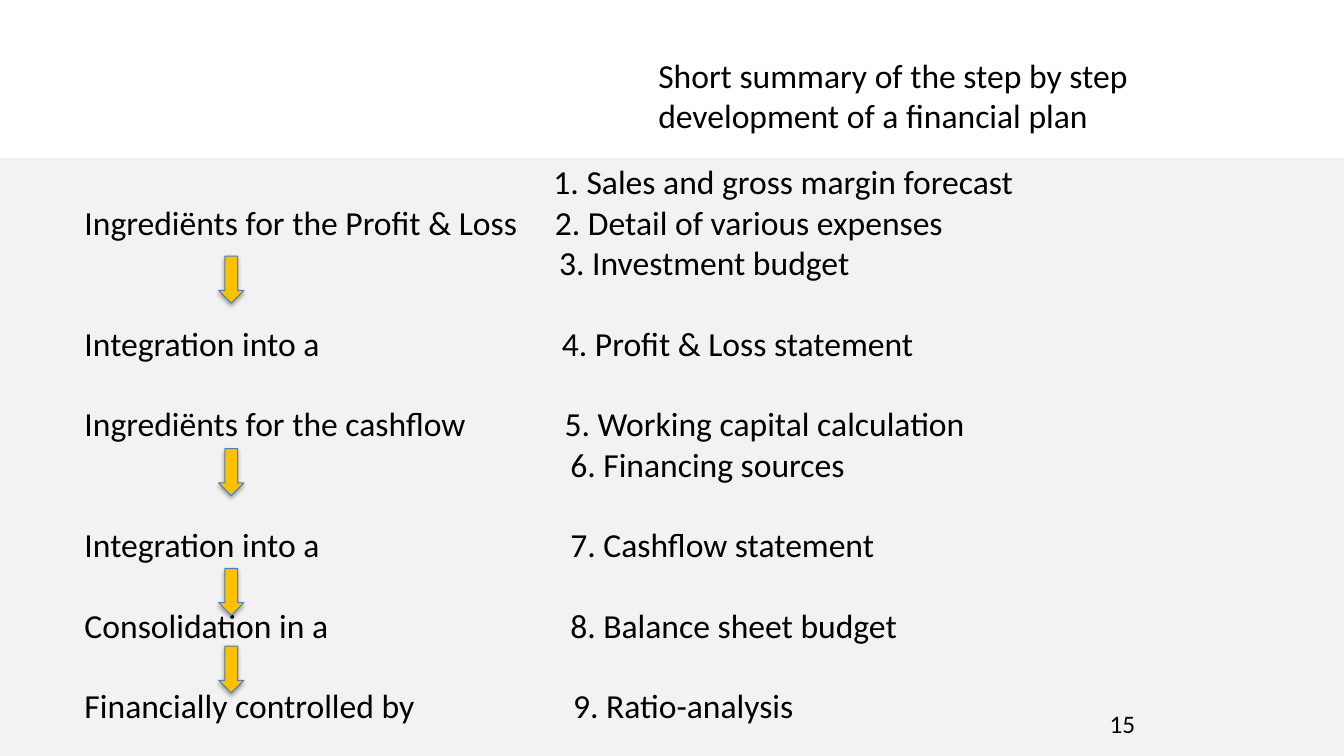
from lxml.etree import SubElement
from pptx import Presentation
from pptx.dml.color import RGBColor as Rgb
from pptx.enum.shapes import MSO_SHAPE as Shape
from pptx.enum.text import MSO_ANCHOR as Anchor, MSO_AUTO_SIZE as Auto, PP_ALIGN as Align
from pptx.oxml.ns import qn
from pptx.util import Pt

COLORS = {"text": "000000", "panel": "F2F2F2", "arrow": "FFC000", "edge": "4B7EBC"}
FRAME = {"word_wrap": True, "auto_size": Auto.NONE, "vertical_anchor": Anchor.TOP,
         "margin_left": Pt(7.2), "margin_right": Pt(7.2),
         "margin_top": Pt(3.6), "margin_bottom": Pt(3.6)}
FONT = {"name": "Calibri", "size": Pt(24), "bold": False}
GAP = 28.8
STEPS = [
    ("", "1. Sales and gross margin forecast", 335, 0),
    ("Ingrediënts for the Profit & Loss", "2. Detail of various expenses", 336, 0),
    ("", "3. Investment budget", 339, 0),
    ("Integration into a", "4. Profit & Loss statement", 341, GAP),
    ("Ingrediënts for the cashflow", "5. Working capital calculation", 343, GAP),
    ("", "6. Financing sources", 347, 0),
    ("Integration into a", "7. Cashflow statement", 347, GAP),
    ("Consolidation in a", "8. Balance sheet budget", 347, GAP),
    ("Financially controlled by", "9. Ratio-analysis", 349, GAP),
]
ARROWS = [183, 320.5, 406, 461.5]


def color(name):
    return Rgb.from_string(COLORS[name])


def apply(item, values):
    for name, value in values.items():
        setattr(item, name, value)


def place(shape, left, top, width, height):
    apply(shape, {"left": Pt(left), "top": Pt(top), "width": Pt(width), "height": Pt(height)})


def write(para, text, **extra):
    para.alignment = Align.LEFT
    run = para.add_run()
    run.text = text
    apply(run.font, {**FONT, **extra})
    run.font.color.rgb = color("text")


def add_box(slide, *box):
    shape = slide.shapes.add_textbox(*map(Pt, box))
    apply(shape.text_frame, FRAME)
    return shape.text_frame


def add_panel(slide):
    panel = slide.shapes.add_shape(Shape.RECTANGLE, 0, Pt(113), Pt(960), Pt(427))
    panel.shadow.inherit = False
    panel.fill.solid()
    panel.fill.fore_color.rgb = color("panel")
    panel.line.fill.background()


def set_title(slide, text):
    title = slide.shapes.title
    place(title, 463, 35.3, 468, 65.5)
    frame = title.text_frame
    apply(frame, FRAME)
    para = frame.paragraphs[0]
    para.line_spacing = 1.0
    write(para, text)


def set_tab(para, pos):
    tabs = SubElement(para._p.get_or_add_pPr(), qn("a:tabLst"))
    SubElement(tabs, qn("a:tab"), pos=str(Pt(pos)), algn="l")


def add_steps(slide):
    frame = add_box(slide, 53.3, 111.6, 818.6, 428)
    for num, (stage, step, pos, gap) in enumerate(STEPS):
        para = frame.add_paragraph() if num else frame.paragraphs[0]
        set_tab(para, pos)
        para.space_before = Pt(gap)
        write(para, f"{stage}\t{step}")


def add_shade(shape):
    shape.shadow.inherit = False
    effects = shape._element.spPr.find(qn("a:effectLst"))
    shade = SubElement(effects, qn("a:outerShdw"), blurRad=str(Pt(3.1)),
                       dist=str(Pt(1.8)), dir="5400000", rotWithShape="0")
    tint = SubElement(shade, qn("a:srgbClr"), val=COLORS["text"])
    SubElement(tint, qn("a:alpha"), val="35000")


def add_arrow(slide, top):
    arrow = slide.shapes.add_shape(Shape.DOWN_ARROW, Pt(156.2), Pt(top), Pt(18), Pt(33.5))
    arrow.fill.solid()
    arrow.fill.fore_color.rgb = color("arrow")
    arrow.line.color.rgb = color("edge")
    arrow.line.width = Pt(0.75)
    add_shade(arrow)


def add_number(slide, text):
    frame = add_box(slide, 684, 502.6, 224, 28.8)
    frame.margin_left = Pt(108.7)
    write(frame.paragraphs[0], text, size=Pt(18))


def main():
    deck = Presentation()
    apply(deck, {"slide_width": Pt(960), "slide_height": Pt(540)})
    slide = deck.slides.add_slide(deck.slide_layouts[5])
    add_panel(slide)
    set_title(slide, "Short summary of the step by step development of a financial plan")
    add_steps(slide)
    for top in ARROWS:
        add_arrow(slide, top)
    add_number(slide, "15")
    deck.save("out.pptx")


if __name__ == "__main__":
    main()
